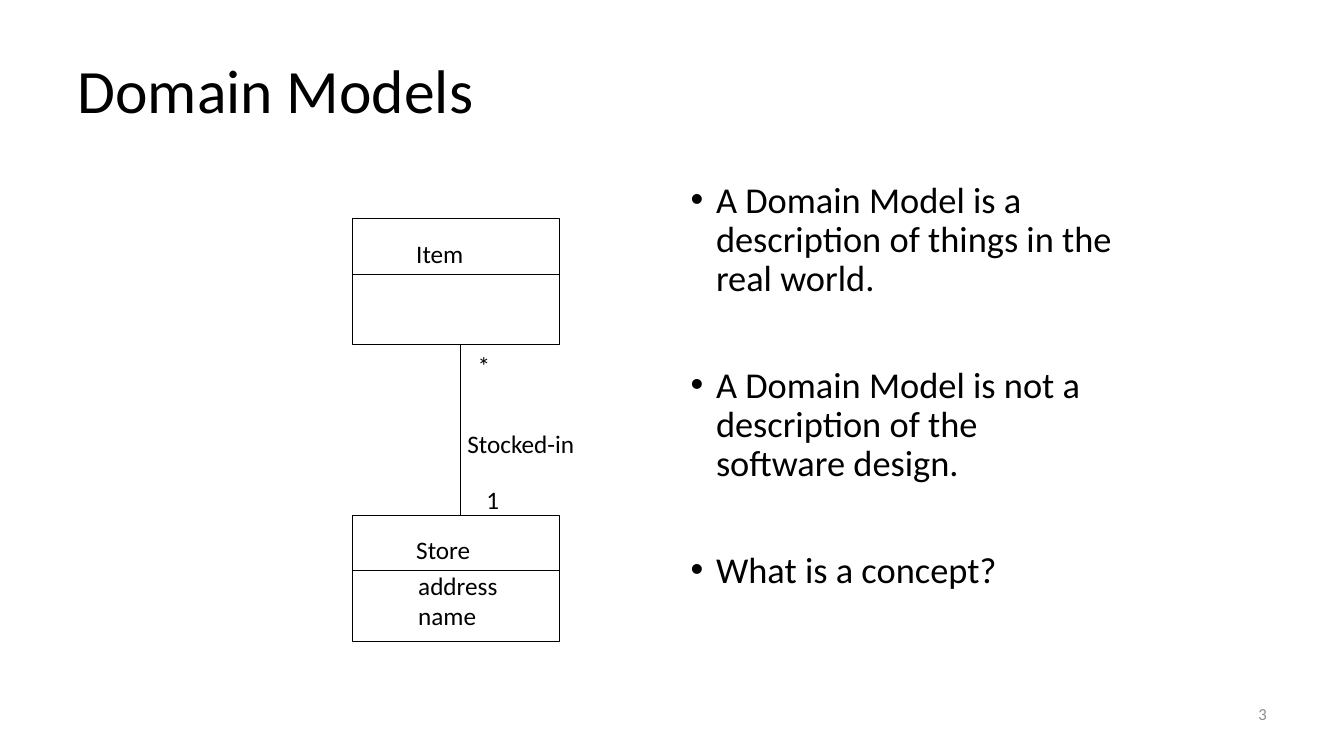
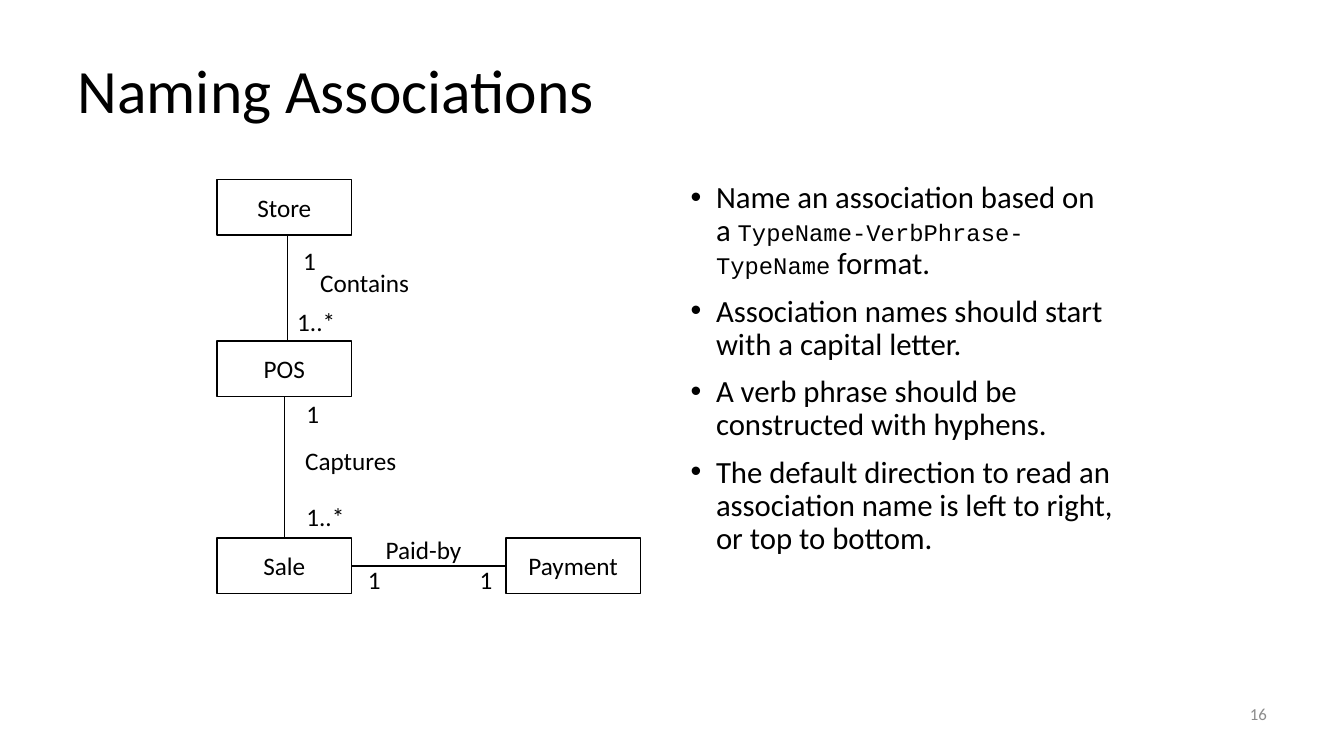
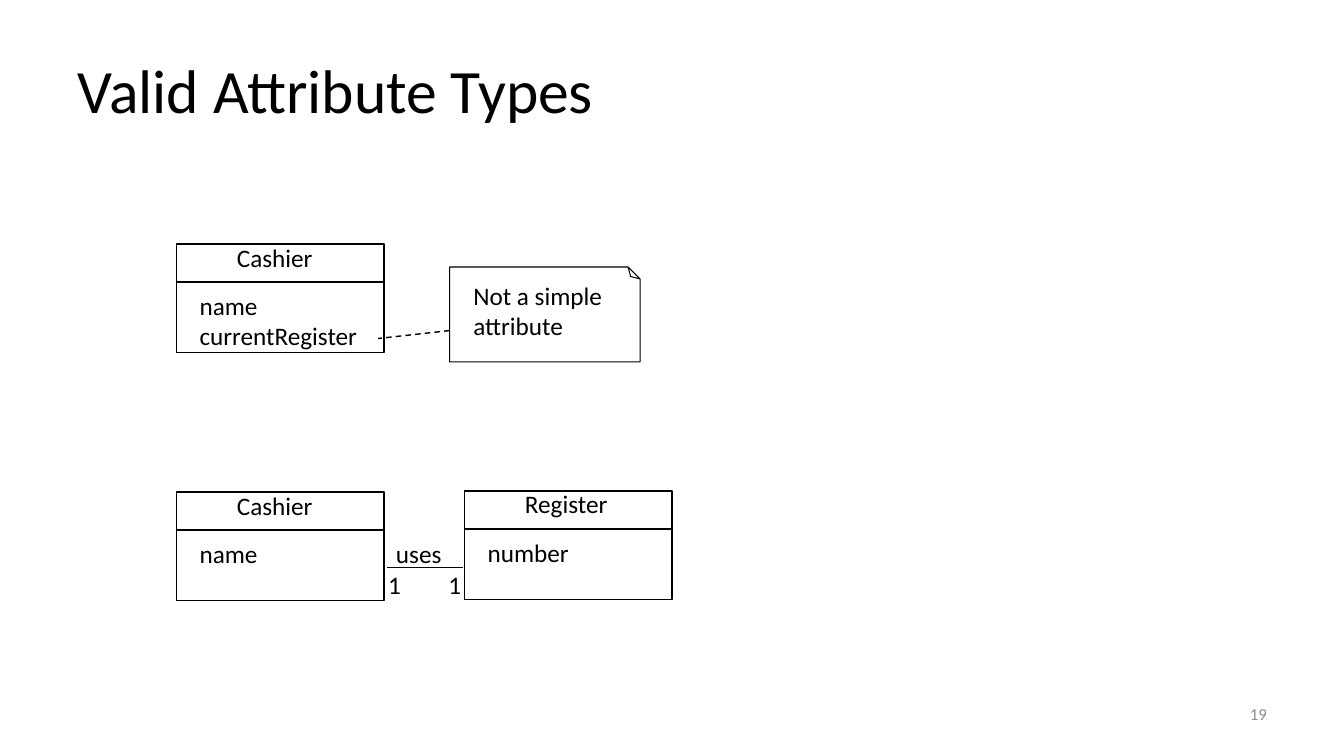
"""Build three slides on domain models, associations and attribute types."""
from collections import namedtuple

from lxml import etree
from pptx import Presentation
from pptx.dml.color import RGBColor
from pptx.enum.dml import MSO_LINE
from pptx.enum.shapes import MSO_CONNECTOR, MSO_SHAPE
from pptx.enum.text import MSO_ANCHOR, MSO_AUTO_SIZE, PP_ALIGN
from pptx.oxml.ns import qn
from pptx.util import Cm, Pt

RECTANGLE = MSO_SHAPE.RECTANGLE
FOLDED_CORNER = MSO_SHAPE.FOLDED_CORNER
STRAIGHT = MSO_CONNECTOR.STRAIGHT
DASH = MSO_LINE.DASH
LEFT, CENTER, RIGHT = PP_ALIGN.LEFT, PP_ALIGN.CENTER, PP_ALIGN.RIGHT
TOP, MIDDLE = MSO_ANCHOR.TOP, MSO_ANCHOR.MIDDLE
NO_FIT, GROW = MSO_AUTO_SIZE.NONE, MSO_AUTO_SIZE.SHAPE_TO_FIT_TEXT
TITLE_AND_CONTENT, TITLE_ONLY = 1, 5
TOP_SIDE, LEFT_SIDE, BOTTOM_SIDE, RIGHT_SIDE = range(4)

COLORS = {"ink": "000000", "paper": "FFFFFF", "muted": "8C8C8C"}
FONT, CODE_FONT = "Calibri", "Courier New"
TITLE_SIZE, LABEL_SIZE, CODE_SIZE, NUMBER_SIZE = 44, 18, 17, 12
TITLE_AREA = (1.7, 0.76, 30.48, 3.18)
BODY_AREA = (17.15, 4.45, 11.2, 12.57)
NUMBER_AREA = (24.28, 17.35, 7.9, 1.27)
LABEL_HEIGHT, LABEL_LINE = 1.02, 0.78
DIGIT_WIDTH, RANGE_WIDTH = 0.86, 1.47

ClassStyle = namedtuple("ClassStyle", "width height divider name_offset attribute_offset weight")
ROOMY = ClassStyle(5.21, 3.18, 1.4, (1.35, 0.37), (1.4, 1.27), 0.75)
COMPACT = ClassStyle(5.23, 2.74, 0.96, (1.27, -0.18), (0.33, 1.04), 1)


def color(name):
    """Return the named palette colour."""
    return RGBColor.from_string(COLORS[name])


class Deck:
    """Hold the shared style and the current slide."""

    def __init__(self):
        """Start an empty wide presentation."""
        self.presentation = Presentation()
        self.presentation.slide_width = Cm(33.87)
        self.presentation.slide_height = Cm(19.05)
        self.slide = None

    def add_run(self, paragraph, text, size, font=FONT, ink="ink"):
        """Append one formatted run."""
        run = paragraph.add_run()
        run.text = text
        run.font.name = font
        run.font.size = Pt(size)
        run.font.color.rgb = color(ink)

    def place(self, holder, area, anchor):
        """Move a placeholder and fix its text frame."""
        holder.left, holder.top, holder.width, holder.height = map(Cm, area)
        frame = holder.text_frame
        frame.word_wrap = True
        frame.auto_size = NO_FIT
        frame.vertical_anchor = anchor
        return frame

    def start(self, heading, number, layout=TITLE_AND_CONTENT):
        """Add a slide with its title and slide number."""
        layouts = self.presentation.slide_layouts
        self.slide = self.presentation.slides.add_slide(layouts[layout])
        title = self.place(self.slide.shapes.title, TITLE_AREA, MIDDLE).paragraphs[0]
        title.alignment = LEFT
        title.line_spacing = 0.9
        self.add_run(title, heading, TITLE_SIZE)
        page = self.slide.shapes.add_textbox(*map(Cm, NUMBER_AREA)).text_frame
        page.word_wrap = True
        page.vertical_anchor = MIDDLE
        page.paragraphs[0].alignment = RIGHT
        self.add_run(page.paragraphs[0], str(number), NUMBER_SIZE, ink="muted")

    def bullets(self, points, size, gap=10):
        """Fill the body; odd pieces of a point are set as code."""
        frame = self.place(self.slide.placeholders[1], BODY_AREA, TOP)
        for index, point in enumerate(points):
            paragraph = frame.add_paragraph() if index else frame.paragraphs[0]
            paragraph.line_spacing = 0.9
            paragraph.space_before = Pt(gap if index else 10)
            properties = paragraph._p.get_or_add_pPr()
            properties.set("marL", str(Cm(0.64)))
            properties.set("indent", str(Cm(-0.64)))
            for order, piece in enumerate(point):
                if order % 2:
                    self.add_run(paragraph, piece, CODE_SIZE, CODE_FONT)
                else:
                    self.add_run(paragraph, piece, size)

    def shape(self, kind, x, y, width, height, weight, fill="paper"):
        """Add an outlined shape."""
        shape = self.slide.shapes.add_shape(kind, Cm(x), Cm(y), Cm(width), Cm(height))
        shape.shadow.inherit = False
        if fill:
            shape.fill.solid()
            shape.fill.fore_color.rgb = color(fill)
        else:
            shape.fill.background()
        shape.line.color.rgb = color("ink")
        shape.line.width = Pt(weight)
        return shape

    def concept(self, name, x, y):
        """Add a box with a centred concept name."""
        box = self.shape(RECTANGLE, x, y, 3.39, 1.4, 1)
        frame = box.text_frame
        frame.word_wrap = False
        frame.vertical_anchor = MIDDLE
        frame.paragraphs[0].alignment = CENTER
        self.add_run(frame.paragraphs[0], name, LABEL_SIZE)
        return box

    def label(self, x, y, width, *lines):
        """Add unwrapped text, one paragraph a line."""
        height = LABEL_HEIGHT + LABEL_LINE * (len(lines) - 1)
        frame = self.slide.shapes.add_textbox(Cm(x), Cm(y), Cm(width), Cm(height)).text_frame
        frame.word_wrap = False
        frame.auto_size = GROW
        for index, line in enumerate(lines):
            paragraph = frame.add_paragraph() if index else frame.paragraphs[0]
            self.add_run(paragraph, line, LABEL_SIZE)

    def line(self, start=(0, 0), end=(0, 0), weight=1.0, dash=None):
        """Add a straight line."""
        points = map(Cm, (*start, *end))
        line = self.slide.shapes.add_connector(STRAIGHT, *points)
        line.line.color.rgb = color("ink")
        line.line.width = Pt(weight)
        if dash:
            line.line.dash_style = dash
        etree.SubElement(line._element.spPr, qn("a:effectLst"))
        return line

    def join(self, first, first_side, second, second_side, weight=1.0):
        """Link the middles of two box sides."""
        link = self.line(weight=weight)
        link.begin_connect(first, first_side)
        link.end_connect(second, second_side)

    def class_box(self, style, x, y, name, name_width, attributes=(), attribute_width=0):
        """Add a class with its name, divider and attributes."""
        self.shape(RECTANGLE, x, y, style.width, style.height, style.weight)
        divider = y + style.divider
        self.line((x, divider), (x + style.width, divider), style.weight)
        dx, dy = style.name_offset
        self.label(x + dx, y + dy, name_width, name)
        if attributes:
            dx, dy = style.attribute_offset
            self.label(x + dx, y + dy, attribute_width, *attributes)

    def note(self, x, y, width, height):
        """Add a note with its top right corner folded."""
        note = self.shape(FOLDED_CORNER, x, y, width, height, 0.75, fill=None)
        properties = note._element.spPr
        properties.find(qn("a:xfrm")).set("flipV", "1")
        guides = properties.find(qn("a:prstGeom")).find(qn("a:avLst"))
        etree.SubElement(guides, qn("a:gd"), name="adj", fmla="val 12500")


def domain_models(deck):
    """Build the slide on domain models."""
    deck.start("Domain Models", 3)
    deck.bullets([
        ["A Domain Model is a description of things in the real world."],
        ["A Domain Model is not a description of the software design."],
        ["What is a concept?"],
    ], 26, gap=48)
    class_left, item_top, store_top = 8.89, 5.51, 12.98
    deck.class_box(ROOMY, class_left, item_top, "Item", 1.75)
    deck.class_box(ROOMY, class_left, store_top, "Store", 1.88, ("address", "name"), 2.54)
    deck.line((11.61, item_top + ROOMY.height), (11.61, store_top), ROOMY.weight)
    deck.label(11.79, 8.71, 0.84, "*")
    deck.label(12.01, 12.07, DIGIT_WIDTH, "1")
    deck.label(11.53, 10.67, 3.23, "Stocked-in")


def naming_associations(deck):
    """Build the slide on naming associations."""
    deck.start("Naming Associations", 16)
    deck.bullets([
        ["Name an association based on a ", "TypeName-VerbPhrase-TypeName", " format."],
        ["Association names should start with a capital letter."],
        ["A verb phrase should be constructed with hyphens."],
        ["The default direction to read an association name is left to right, or top to bottom."],
    ], 22)
    column, sale_top = 5.47, 13.56
    deck.concept("Store", column, 4.52)
    pos = deck.concept("POS", column, 8.59)
    sale = deck.concept("Sale", column, sale_top)
    payment = deck.concept("Payment", 12.75, sale_top)
    deck.line((7.24, 5.92), (7.24, 8.59))
    deck.join(pos, BOTTOM_SIDE, sale, TOP_SIDE, 0.75)
    deck.join(sale, RIGHT_SIDE, payment, LEFT_SIDE)
    for x, y, width, verb in (
        (7.82, 6.6, 2.77, "Contains"),
        (7.44, 11.1, 2.84, "Captures"),
        (9.47, 13.34, 2.44, "Paid-by"),
    ):
        deck.label(x, y, width, verb)
    for x, y in ((7.39, 6.05), (7.47, 9.91), (9.02, 14.1), (11.84, 14.1)):
        deck.label(x, y, DIGIT_WIDTH, "1")
    for x, y in ((7.24, 7.59), (7.47, 12.52)):
        deck.label(x, y, RANGE_WIDTH, "1..*")


def valid_attribute_types(deck):
    """Build the slide on valid attribute types."""
    deck.start("Valid Attribute Types", 19, TITLE_ONLY)
    cashier_left = 4.45
    deck.class_box(COMPACT, cashier_left, 6.15, "Cashier", 2.44, ("name", "currentRegister"), 4.52)
    deck.class_box(COMPACT, cashier_left, 12.4, "Cashier", 2.44, ("name",), 1.98)
    deck.class_box(COMPACT, 11.71, 12.37, "Register", 2.62, ("number",), 2.67)
    deck.line((11.33, 8.33), (9.53, 8.53), dash=DASH)
    deck.note(11.33, 6.73, 4.8, 2.39)
    deck.label(11.68, 6.93, 3.78, "Not a simple", "attribute")
    deck.line((9.75, 14.3), (11.66, 14.3))
    deck.label(9.73, 13.44, 1.68, "uses")
    for x in (9.53, 11.05):
        deck.label(x, 14.22, DIGIT_WIDTH, "1")


def main():
    """Build and save the presentation."""
    deck = Deck()
    domain_models(deck)
    naming_associations(deck)
    valid_attribute_types(deck)
    deck.presentation.save("out.pptx")


if __name__ == "__main__":
    main()
